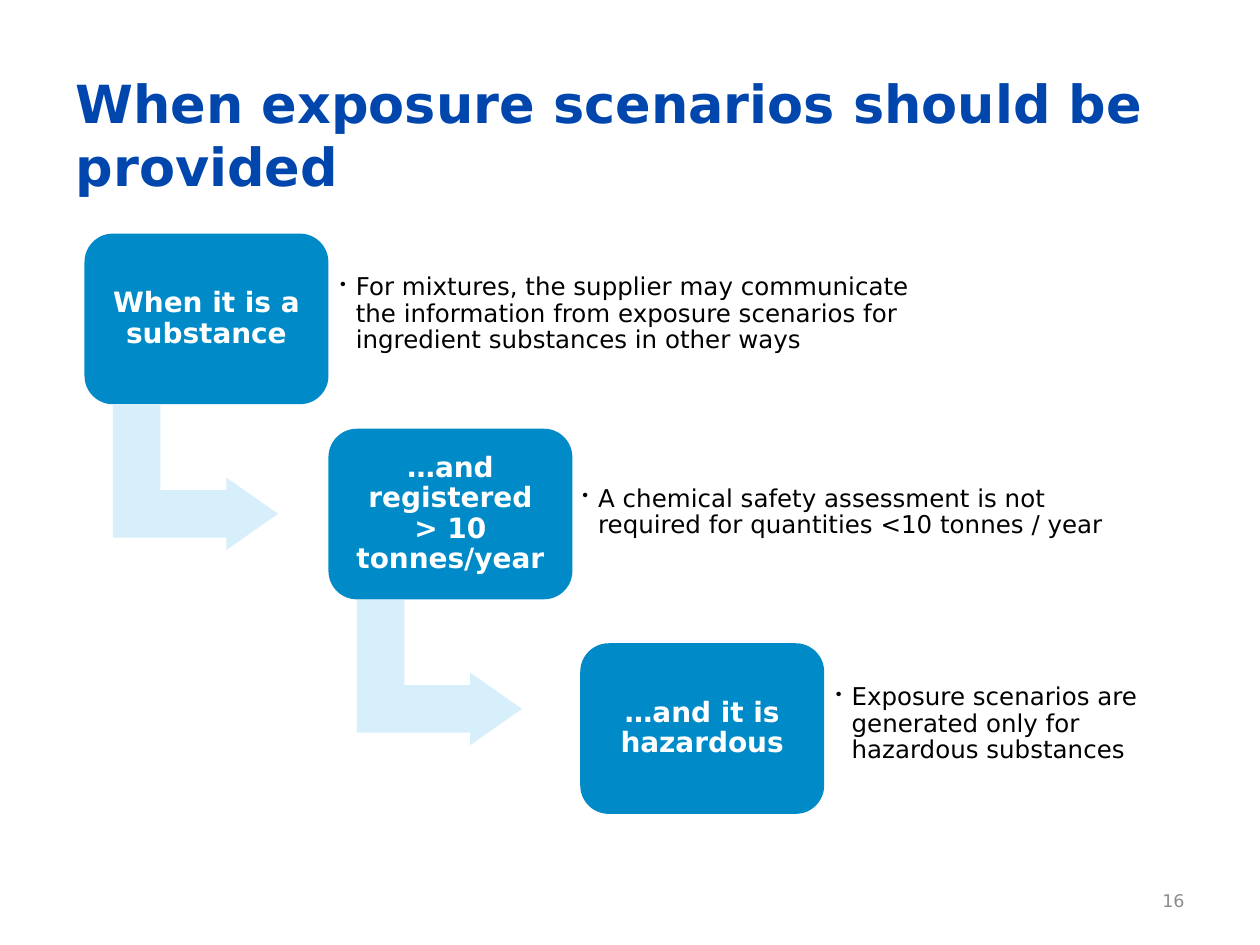
import pptx
import pptx.util
import pptx.dml.color
import pptx.enum.shapes
import pptx.enum.text
import pptx.oxml
import pptx.oxml.ns
from pptx.util import Pt

TITLE = "When exposure scenarios should be provided"
PAGE_NUMBER = "16"
# condition, (left, top) of its box, note, (left, top, width, height) of the note
STEPS = [
    ("When it is a substance", (48.3, 133.5),
     "For mixtures, the supplier may communicate the information from "
     "exposure scenarios for ingredient substances in other ways",
     (190, 140.4, 336.5, 78.5)),
    ("…and registered > 10 tonnes/year", (187.7, 245),
     "A chemical safety assessment is not required for quantities "
     "<10 tonnes / year",
     (328.5, 253.5, 332, 78.5)),
    ("…and it is hazardous", (331.6, 367.6),
     "Exposure scenarios are generated only for hazardous substances",
     (473.3, 365, 189.5, 98)),
]
COLORS = {"title": "0046AD", "box": "008BC8", "arrow": "D7EFFA",
          "box text": "FFFFFF", "note": "000000", "number": "8C8C8C"}
FONT = "DejaVu Sans"
BOX_W, BOX_H = 139.4, 97.5
ARROW_W, ARROW_H = 82.8, 94.4      # before the quarter turn
ARROW_DX, ARROW_DY = 22, 92.2      # from the corner of its box
ARROW_ADJUSTMENTS = (0.328, 0.25, 0.358)
ALIGN = pptx.enum.text.PP_ALIGN
SHAPES = pptx.enum.shapes.MSO_SHAPE


def write(shape, text, size, color, align, bold=False, inset=None, spacing=None):
    frame = shape.text_frame
    frame.text = text
    frame.word_wrap = True
    frame.auto_size = pptx.enum.text.MSO_AUTO_SIZE.NONE
    frame.vertical_anchor = pptx.enum.text.MSO_ANCHOR.MIDDLE
    if inset is not None:
        frame.margin_left = frame.margin_right = Pt(inset)
        frame.margin_top = frame.margin_bottom = Pt(inset)
    paragraph = frame.paragraphs[0]
    paragraph.alignment = align
    if spacing:
        paragraph.line_spacing = spacing
    font = paragraph.runs[0].font
    font.name, font.size, font.bold = FONT, Pt(size), bold
    font.color.rgb = pptx.dml.color.RGBColor.from_string(COLORS[color])
    return paragraph


def add_filled(slide, preset, left, top, width, height, color):
    shape = slide.shapes.add_shape(preset, Pt(left), Pt(top), Pt(width), Pt(height))
    shape.shadow.inherit = False
    shape.fill.solid()
    shape.fill.fore_color.rgb = pptx.dml.color.RGBColor.from_string(COLORS[color])
    shape.line.fill.background()
    return shape


def add_bullet(paragraph):
    properties = paragraph._p.get_or_add_pPr()
    properties.set("marL", str(Pt(9)))
    properties.set("indent", str(-Pt(9)))
    for tag, name, value in (("buSzPct", "val", "70000"), ("buChar", "char", "•")):
        mark = pptx.oxml.parse_xml(
            f'<a:{tag} {pptx.oxml.ns.nsdecls("a")} {name}="{value}"/>')
        properties.append(mark)


def main():
    deck = pptx.Presentation()
    deck.slide_width, deck.slide_height = Pt(720), Pt(540)
    slide = deck.slides.add_slide(deck.slide_layouts[5])

    # Title
    title = slide.shapes.title
    title.left, title.top, title.width, title.height = Pt(36), Pt(31.7), Pt(648), Pt(90)
    write(title, TITLE, 30, "title", ALIGN.LEFT, bold=True)

    # Page number
    number = slide.shapes.add_textbox(Pt(516), Pt(500.4), Pt(168), Pt(28.8))
    write(number, PAGE_NUMBER, 10, "number", ALIGN.RIGHT)

    # Staircase: arrow to the next step, box, note
    for index, (condition, (left, top), note, note_area) in enumerate(STEPS):
        if index < len(STEPS) - 1:
            arrow = add_filled(slide, SHAPES.BENT_UP_ARROW, left + ARROW_DX,
                               top + ARROW_DY, ARROW_W, ARROW_H, "arrow")
            arrow.rotation = 90
            for position, value in enumerate(ARROW_ADJUSTMENTS):
                arrow.adjustments[position] = value

        box = add_filled(slide, SHAPES.ROUNDED_RECTANGLE, left, top, BOX_W, BOX_H, "box")
        write(box, condition, 16, "box text", ALIGN.CENTER, bold=True,
              inset=9.4, spacing=0.9)

        remark = slide.shapes.add_textbox(*map(Pt, note_area))
        add_bullet(write(remark, note, 14, "note", ALIGN.LEFT, inset=4.3, spacing=0.9))

    deck.save("out.pptx")


if __name__ == "__main__":
    main()
